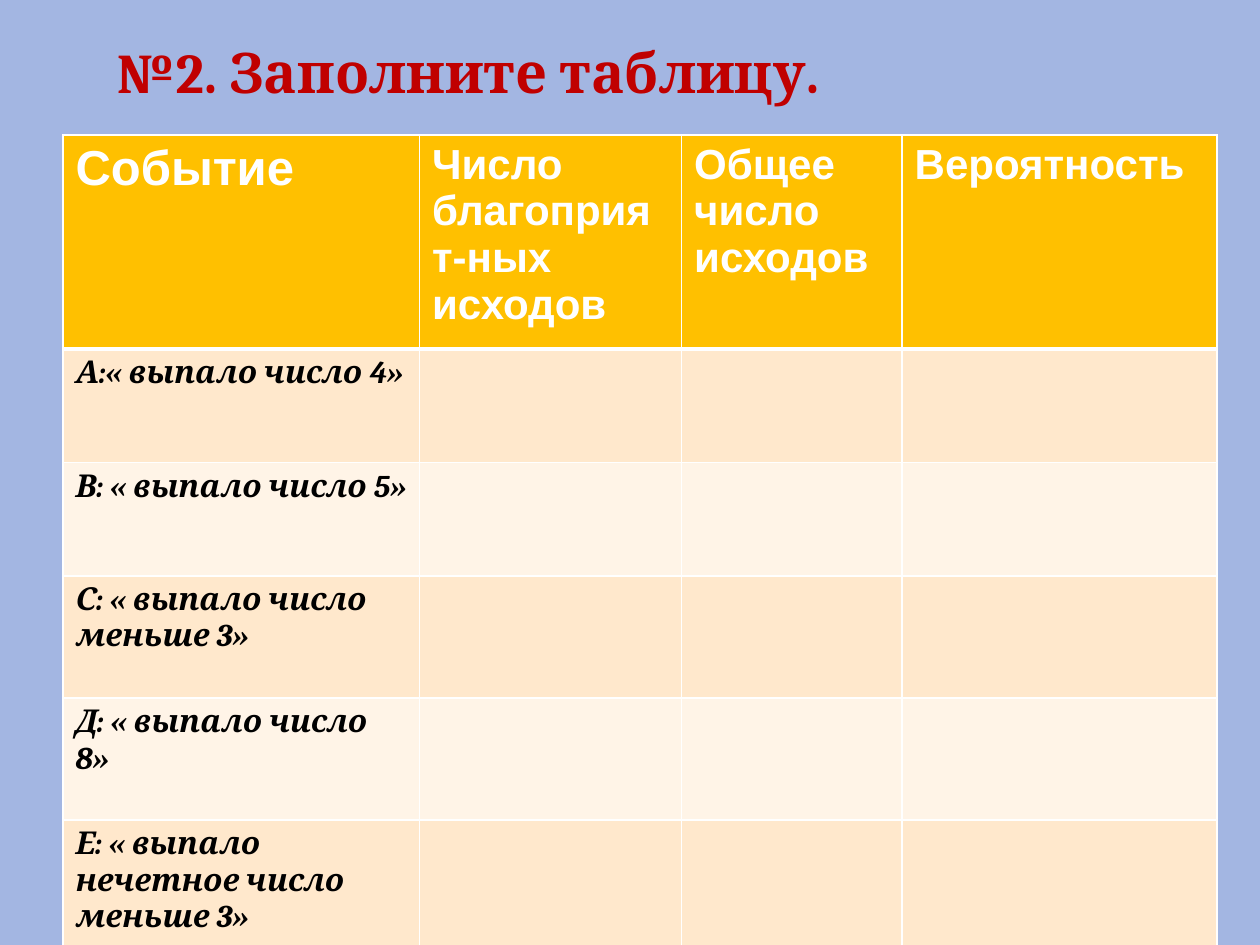
from dataclasses import dataclass

from lxml.etree import SubElement
from pptx import Presentation
from pptx.dml.color import RGBColor
from pptx.oxml.ns import qn
from pptx.util import Inches, Pt


@dataclass(frozen=True)
class Theme:
    """Colours, fonts and type sizes of the slide."""
    background: str = "A3B6E2"
    title: str = "C00000"
    header: str = "FFC000"
    bands: tuple = ("FFE8CC", "FFF4E7")
    white: str = "FFFFFF"
    ink: str = "000000"
    serif: str = "Cambria"
    sans: str = "Arial"
    title_size: int = 32
    event_header_size: int = 28
    header_size: int = 24
    event_size: int = 18


THEME = Theme()
HEADINGS = ["Событие", "Число благоприят-ных исходов", "Общее число исходов", "Вероятность"]
EVENTS = [
    "А:« выпало число 4»",
    "В: « выпало число 5»",
    "С: « выпало число меньше 3»",
    "Д: « выпало число 8»",
    "Е: « выпало нечетное число меньше 3»",
]
COLUMN_WIDTHS = [2.83, 2.08, 1.75, 2.5]
ROW_HEIGHTS = [1.43, 0.9, 0.9, 0.97, 0.97, 0.97]


def write_text(text_frame, text, font_name, size, colour, italic=False):
    """Put one bold paragraph into a text frame and return it."""
    text_frame.text = text
    paragraph = text_frame.paragraphs[0]
    font = paragraph.runs[0].font if text else paragraph.font
    font.name, font.size = font_name, Pt(size)
    font.bold, font.italic = True, italic
    font.color.rgb = RGBColor.from_string(colour)
    return paragraph


def style_cell(cell, fill, top=1, bottom=1):
    """Give a cell white borders and a plain fill."""
    properties = cell._tc.get_or_add_tcPr()
    for side, width in (("L", 1), ("R", 1), ("T", top), ("B", bottom)):
        border = SubElement(properties, qn(f"a:ln{side}"), w=str(Pt(width)))
        SubElement(SubElement(border, qn("a:solidFill")), qn("a:srgbClr"), val=THEME.white)
    cell.fill.solid()
    cell.fill.fore_color.rgb = RGBColor.from_string(fill)


def add_title(slide, left, top, width, height):
    """Place the task title in its box."""
    title_frame = slide.shapes.add_textbox(left, top, width, height).text_frame
    title_frame.word_wrap = True
    title = write_text(title_frame, "№2. Заполните таблицу.", THEME.serif,
                       THEME.title_size, THEME.title)
    title.space_before = Pt(3.6)
    title._p.get_or_add_pPr().set("marL", str(Inches(0.08)))


def add_event_table(slide, left, top, width, height):
    """Place the table of events with blank cells to fill in."""
    table = slide.shapes.add_table(len(ROW_HEIGHTS), len(COLUMN_WIDTHS),
                                   left, top, width, height).table
    for column, column_width in zip(table.columns, COLUMN_WIDTHS):
        column.width = Inches(column_width)
    for row, row_height in zip(table.rows, ROW_HEIGHTS):
        row.height = Inches(row_height)

    for index, heading in enumerate(HEADINGS):
        cell = table.cell(0, index)
        size = THEME.header_size if index else THEME.event_header_size
        write_text(cell.text_frame, heading, THEME.sans, size, THEME.white)
        style_cell(cell, THEME.header, bottom=3)

    for row_index, event in enumerate(EVENTS, start=1):
        band = THEME.bands[(row_index - 1) % 2]
        for column_index in range(len(HEADINGS)):
            cell = table.cell(row_index, column_index)
            if column_index == 0:
                write_text(cell.text_frame, event, THEME.serif, THEME.event_size,
                           THEME.ink, italic=True)
            style_cell(cell, band, top=3 if row_index == 1 else 1)


def main():
    """Build and save the slide."""
    presentation = Presentation()
    presentation.slide_width, presentation.slide_height = Inches(10), Inches(7.5)
    slide = presentation.slides.add_slide(presentation.slide_layouts[6])
    slide.background.fill.solid()
    slide.background.fill.fore_color.rgb = RGBColor.from_string(THEME.background)
    add_title(slide, Inches(0.75), Inches(0.25), Inches(8.5), Inches(0.65))
    add_event_table(slide, Inches(0.5), Inches(1.07),
                    Inches(sum(COLUMN_WIDTHS)), Inches(sum(ROW_HEIGHTS)))
    presentation.save("out.pptx")


if __name__ == "__main__":
    main()
